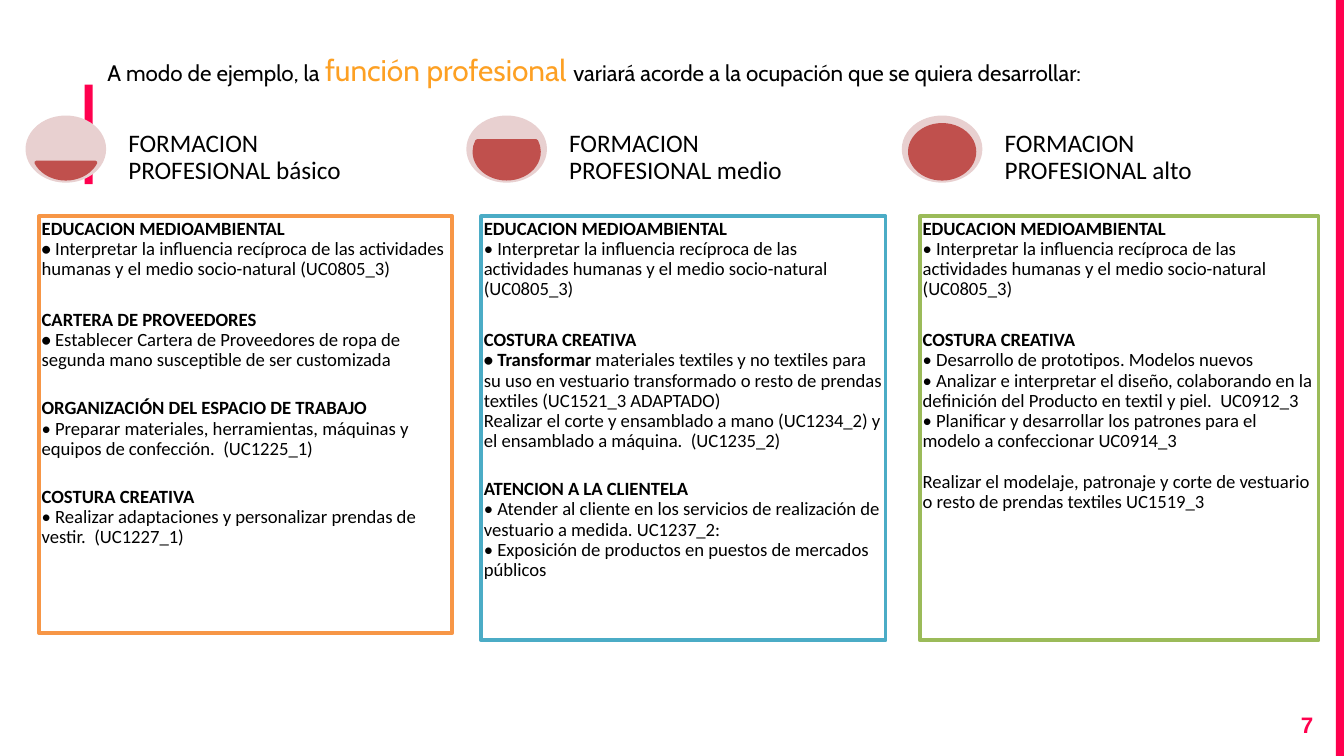
from dataclasses import dataclass

from pptx import Presentation
from pptx import util as u
from pptx.dml.color import RGBColor
from pptx.enum import shapes, text

EMU_PER_PX = 4572  # 200 px to the inch
SLIDE_WIDTH, SLIDE_HEIGHT = 2000, 1125
ACCENT, BLACK, WHITE = "FF004E", "000000", "FFFFFF"
GAUGE_BACK, GAUGE_FILL = "E8D0D0", "C0504D"
FIRST_GAP, SECTION_GAP = 16.5, 14.8


@dataclass
class Item:
    body: str
    lead: str = ""  # bold opening words


@dataclass
class Section:
    heading: str
    items: list[Item]


@dataclass
class Level:
    name: str
    left: int
    chord: tuple[int, int] | None  # start and end angles; None is full
    panel: tuple[int, int, int]  # left, width, height
    color: str
    sections: list[Section]


def environment(lead: str, bullet: str) -> Section:
    return Section("EDUCACION MEDIOAMBIENTAL", [Item(
        bullet + "Interpretar la influencia recíproca de las actividades humanas "
        "y el medio socio-natural (UC0805_3)", lead)])


LEVELS = [
    Level("básico", 38, (20, 160), (58, 615, 620), "F79646", [
        environment("• ", ""),
        Section("CARTERA DE PROVEEDORES", [
            Item("Establecer Cartera de Proveedores de ropa de segunda mano "
                 "susceptible de ser customizada", "• ")]),
        Section("ORGANIZACIÓN DEL ESPACIO DE TRABAJO", [
            Item("• Preparar materiales, herramientas, máquinas y equipos de "
                 "confección.  (UC1225_1)")]),
        Section("COSTURA CREATIVA", [
            Item("• Realizar adaptaciones y personalizar prendas de vestir.  (UC1227_1)")]),
    ]),
    Level("medio", 694, (340, 200), (716, 602, 631), "4BACC6", [
        environment("", "• "),
        Section("COSTURA CREATIVA", [
            Item(" materiales textiles y no textiles para su uso en vestuario "
                 "transformado o resto de prendas textiles (UC1521_3 ADAPTADO)",
                 "• Transformar"),
            Item("Realizar el corte y ensamblado a mano (UC1234_2) y el ensamblado "
                 "a máquina.  (UC1235_2)")]),
        Section("ATENCION A LA CLIENTELA", [
            Item("• Atender al cliente en los servicios de realización de vestuario "
                 "a medida. UC1237_2:"),
            Item("• Exposición de productos en puestos de mercados públicos")]),
    ]),
    Level("alto", 1342, None, (1369, 593, 631), "9BBB59", [
        environment("", "• "),
        Section("COSTURA CREATIVA", [
            Item("• Desarrollo de prototipos. Modelos nuevos"),
            Item("• Analizar e interpretar el diseño, colaborando en la definición "
                 "del Producto en textil y piel.  UC0912_3"),
            Item("• Planificar y desarrollar los patrones para el modelo a "
                 "confeccionar UC0914_3")]),
        Section("", [
            Item("Realizar el modelaje, patronaje y corte de vestuario "
                 "o resto de prendas textiles UC1519_3")]),
    ]),
]


def px(length: int) -> u.Emu:
    return u.Emu(length * EMU_PER_PX)


def rgb(color: str) -> RGBColor:
    return RGBColor.from_string(color)


def add_filled(slide, kind, left: int, top: int, width: int, height: int,
               fill: str, line: str | None = None):
    shape = slide.shapes.add_shape(kind, px(left), px(top), px(width), px(height))
    shape.shadow.inherit = False
    shape.fill.solid()
    shape.fill.fore_color.rgb = rgb(fill)
    if line:
        shape.line.color.rgb = rgb(line)
        shape.line.width = u.Pt(2)
    else:
        shape.line.fill.background()
    return shape


def set_frame(frame, inset: int, anchor=text.MSO_ANCHOR.TOP) -> None:
    frame.word_wrap = True
    frame.vertical_anchor = anchor
    frame.margin_left = frame.margin_right = px(inset)
    frame.margin_top = frame.margin_bottom = px(inset)


def add_text_box(slide, left: int, top: int, width: int, height: int, inset: int,
                 anchor=text.MSO_ANCHOR.TOP):
    """Add an empty text box and return its first paragraph."""
    box = slide.shapes.add_textbox(px(left), px(top), px(width), px(height))
    set_frame(box.text_frame, inset, anchor)
    return box.text_frame.paragraphs[0]


def add_run(paragraph, words: str, size: float, font: str,
            color: str = BLACK, bold: bool = False) -> None:
    run = paragraph.add_run()
    run.text = words
    run.font.size = u.Pt(size)
    run.font.name = font
    run.font.bold = bold
    run.font.color.rgb = rgb(color)


def add_gauge(slide, level: Level) -> None:
    oval = shapes.MSO_SHAPE.OVAL
    add_filled(slide, oval, level.left, 172, 120, 100, GAUGE_BACK)
    kind = shapes.MSO_SHAPE.CHORD if level.chord else oval
    content = add_filled(slide, kind, level.left + 12, 186, 96, 80, GAUGE_FILL, GAUGE_FILL)
    for index, angle in enumerate(level.chord or ()):
        content.adjustments[index] = angle * 0.6  # 60000ths of a degree / 100000


def add_panel(slide, level: Level) -> None:
    left, width, height = level.panel
    panel = add_filled(slide, shapes.MSO_SHAPE.RECTANGLE, left, 322, width, height,
                       WHITE, level.color)
    frame = panel.text_frame
    set_frame(frame, 4)
    paragraph = None
    for number, section in enumerate(level.sections):
        if paragraph is not None:
            gap = FIRST_GAP if number == 1 else SECTION_GAP
            paragraph.space_after = u.Pt(gap if section.heading else 11)
        heading = [Item("", section.heading)] if section.heading else []
        for item in heading + section.items:
            paragraph = frame.paragraphs[0] if paragraph is None else frame.add_paragraph()
            paragraph.alignment = text.PP_ALIGN.LEFT
            paragraph.line_spacing = 0.9
            paragraph.space_after = u.Pt(0)
            for words, bold in ((item.lead, True), (item.body, False)):
                if words:
                    add_run(paragraph, words, 10, "Calibri", bold=bold)


def add_level(slide, level: Level) -> None:
    add_gauge(slide, level)
    add_panel(slide, level)
    label = add_text_box(slide, level.left + 145, 172, 356, 111, 8, text.MSO_ANCHOR.BOTTOM)
    label.line_spacing = 0.9
    add_run(label, f"FORMACION PROFESIONAL {level.name}", 13.5, "Calibri")


def main() -> None:
    presentation = Presentation()
    presentation.slide_width = px(SLIDE_WIDTH)
    presentation.slide_height = px(SLIDE_HEIGHT)
    slide = presentation.slides.add_slide(presentation.slide_layouts[6])

    for bar in ((126, 126, 12, 148), (1988, 0, 12, SLIDE_HEIGHT)):
        add_filled(slide, shapes.MSO_SHAPE.RECTANGLE, *bar, ACCENT)

    title = add_text_box(slide, 140, 57, 1586, 122, 20)
    add_run(title, "A modo de ejemplo, la ", 12, "Cabin")
    add_run(title, "función profesional ", 16, "Cabin", "FDA023")
    add_run(title, "variará acorde a la ocupación que se quiera desarrollar:", 12, "Cabin")

    page_number = add_text_box(slide, 1854, 1039, 120, 86, 20)
    page_number.alignment = text.PP_ALIGN.RIGHT
    add_run(page_number, "7", 12, "Arial", ACCENT, bold=True)

    for level in LEVELS:
        add_level(slide, level)
    presentation.save("out.pptx")


if __name__ == "__main__":
    main()
